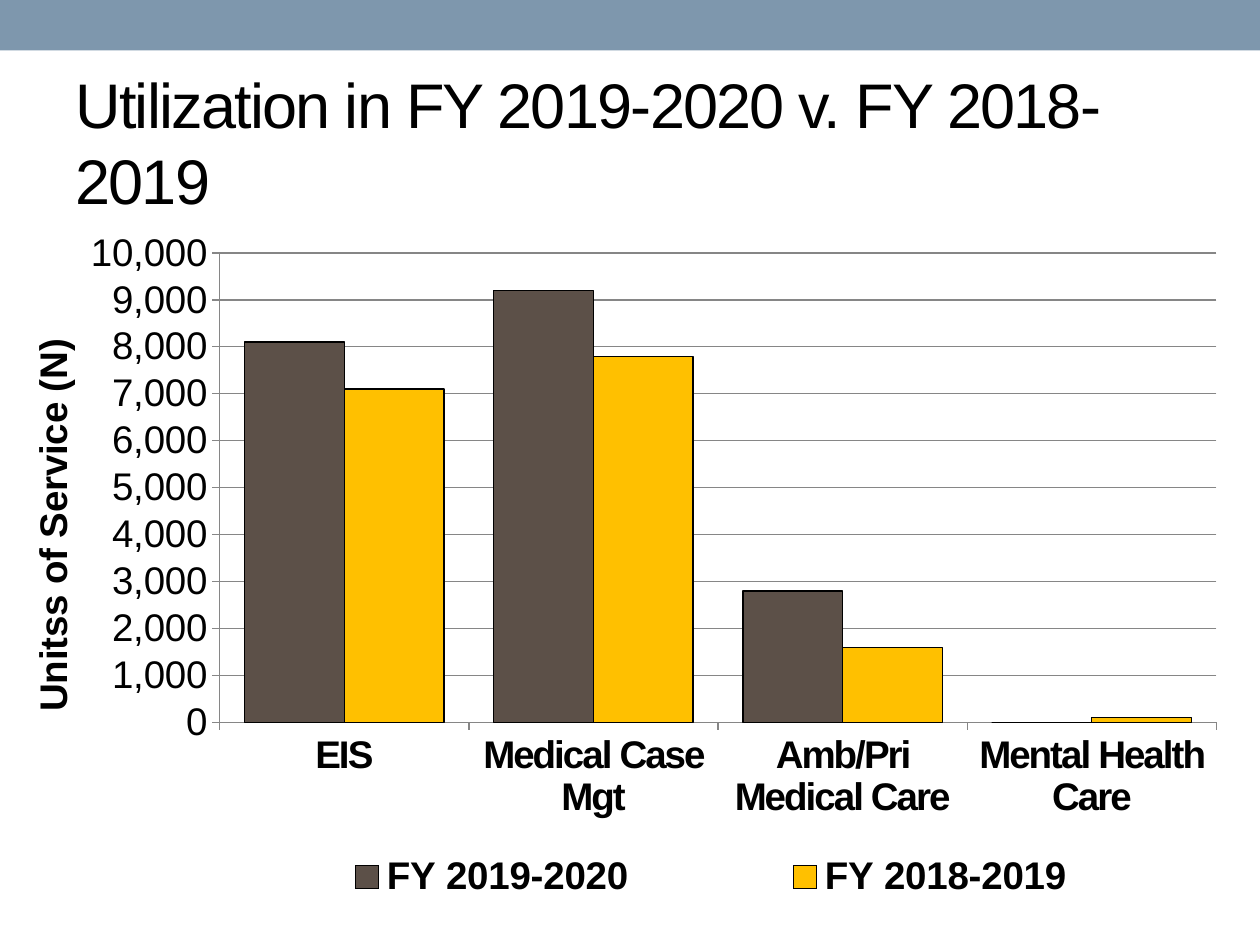
from dataclasses import dataclass

from lxml import etree
from pptx import Presentation
from pptx import util as u
from pptx.chart.data import CategoryChartData
from pptx.dml.color import RGBColor
from pptx.enum import chart as ch, shapes, text
from pptx.oxml.ns import qn


@dataclass(frozen=True)
class Theme:
    font: str = "Arial"
    ink: str = "000000"
    band: str = "7E97AD"
    rule: str = "868686"
    current_year: str = "5C5048"
    prior_year: str = "FFC000"
    title_size: int = 36
    chart_size: int = 22
    tracking: int = -100


THEME = Theme()


def rgb(color):
    return RGBColor.from_string(color)


def style_font(font, size, color, bold=False):
    font.name = THEME.font
    font.size = u.Pt(size)
    font.bold = bold
    font.color.rgb = rgb(color)


def write(frame, words, size, color=THEME.ink, bold=False, tracking=None):
    run = frame.paragraphs[0].add_run()
    run.text = words
    style_font(run.font, size, color, bold)
    if tracking is not None:
        run.font._element.set("spc", str(tracking))


def set_layout(part, x, y, w, h, inner=False):
    layout = part.get_or_add_layout() if hasattr(part, "get_or_add_layout") else part.find(qn("c:layout"))
    if layout is None:
        layout = etree.Element(qn("c:layout"))
        part.insert(0, layout)
    for child in list(layout):
        layout.remove(child)
    manual = etree.SubElement(layout, qn("c:manualLayout"))
    settings = [("layoutTarget", "inner")] if inner else []
    settings += [("xMode", "edge"), ("yMode", "edge"), ("x", x), ("y", y), ("w", w), ("h", h)]
    for tag, value in settings:
        etree.SubElement(manual, qn(f"c:{tag}")).set("val", str(value))


class SlideBuilder:
    def __init__(self, slide, theme):
        self.slide = slide
        self.theme = theme

    def band(self, left, top, width, height):
        header = self.slide.shapes.add_shape(
            shapes.MSO_SHAPE.RECTANGLE, *map(u.Inches, (left, top, width, height)))
        header.shadow.inherit = False
        header.fill.solid()
        header.fill.fore_color.rgb = rgb(self.theme.band)
        header.line.fill.background()

    def title(self, words, left, top, width, height):
        heading = self.slide.shapes.add_textbox(*map(u.Inches, (left, top, width, height)))
        frame = heading.text_frame
        frame.word_wrap = True
        frame.vertical_anchor = text.MSO_ANCHOR.MIDDLE
        write(frame, words, self.theme.title_size, tracking=self.theme.tracking)

    def columns(self, services, years, axis_name, left, top, width, height):
        theme = self.theme
        utilization = CategoryChartData(number_format="#,##0")
        utilization.categories = services
        for year, units, _ in years:
            utilization.add_series(year, units)
        chart = self.slide.shapes.add_chart(
            ch.XL_CHART_TYPE.COLUMN_CLUSTERED,
            *map(u.Inches, (left, top, width, height)), utilization).chart
        chart.has_title = False
        style_font(chart.font, theme.chart_size, theme.ink)

        plot = chart.plots[0]
        plot.gap_width = 50
        plot.overlap = 0
        plot.vary_by_categories = False
        for series, (_, _, color) in zip(plot.series, years):
            series.format.fill.solid()
            series.format.fill.fore_color.rgb = rgb(color)
            series.format.line.color.rgb = rgb(theme.ink)
            series.format.line.width = u.Pt(0.75)

        service_axis, unit_axis = chart.category_axis, chart.value_axis
        for axis, bold in ((service_axis, True), (unit_axis, False)):
            style_font(axis.tick_labels.font, theme.chart_size, theme.ink, bold)
            axis.major_tick_mark = ch.XL_TICK_MARK.OUTSIDE
            axis.format.line.color.rgb = rgb(theme.rule)
        service_axis.tick_labels.font._element.set("spc", str(theme.tracking))
        unit_axis.minimum_scale = 0
        unit_axis.maximum_scale = 10000
        unit_axis.major_unit = 1000
        unit_axis.tick_labels.number_format = "#,##0"
        unit_axis.tick_labels.number_format_is_linked = False
        unit_axis.has_major_gridlines = True
        unit_axis.major_gridlines.format.line.color.rgb = rgb(theme.rule)
        write(unit_axis.axis_title.text_frame, axis_name, theme.chart_size, bold=True)

        chart.has_legend = True
        legend = chart.legend
        legend.position = ch.XL_LEGEND_POSITION.BOTTOM
        legend.include_in_layout = False
        style_font(legend.font, theme.chart_size, theme.ink, bold=True)

        plot_area = chart._chartSpace.chart.plotArea
        set_layout(plot_area, 0.164, 0.033, 0.824, 0.69, inner=True)
        legend_element = legend._element
        if legend_element.find(qn("c:layout")) is None:
            legend_element.find(qn("c:legendPos")).addnext(etree.Element(qn("c:layout")))
        set_layout(legend_element, 0.15, 0.91, 0.84, 0.08)


def main():
    deck = Presentation()
    deck.slide_width, deck.slide_height = u.Inches(10), u.Inches(7.5)
    page = SlideBuilder(deck.slides.add_slide(deck.slide_layouts[6]), THEME)
    page.band(0, 0, 10, 0.4)
    page.title("Utilization in FY 2019-2020 v. FY 2018-2019", 0.5, 0.58, 9, 1.08)
    page.columns(
        ["EIS", "Medical Case Mgt", "Amb/Pri Medical Care", "Mental Health Care"],
        [("FY 2019-2020", (8100, 9200, 2800, 0), THEME.current_year),
         ("FY 2018-2019", (7100, 7800, 1600, 100), THEME.prior_year)],
        "Unitss of Service (N)", 0.17, 1.83, 9.6, 5.4)
    deck.save("out.pptx")


if __name__ == "__main__":
    main()
